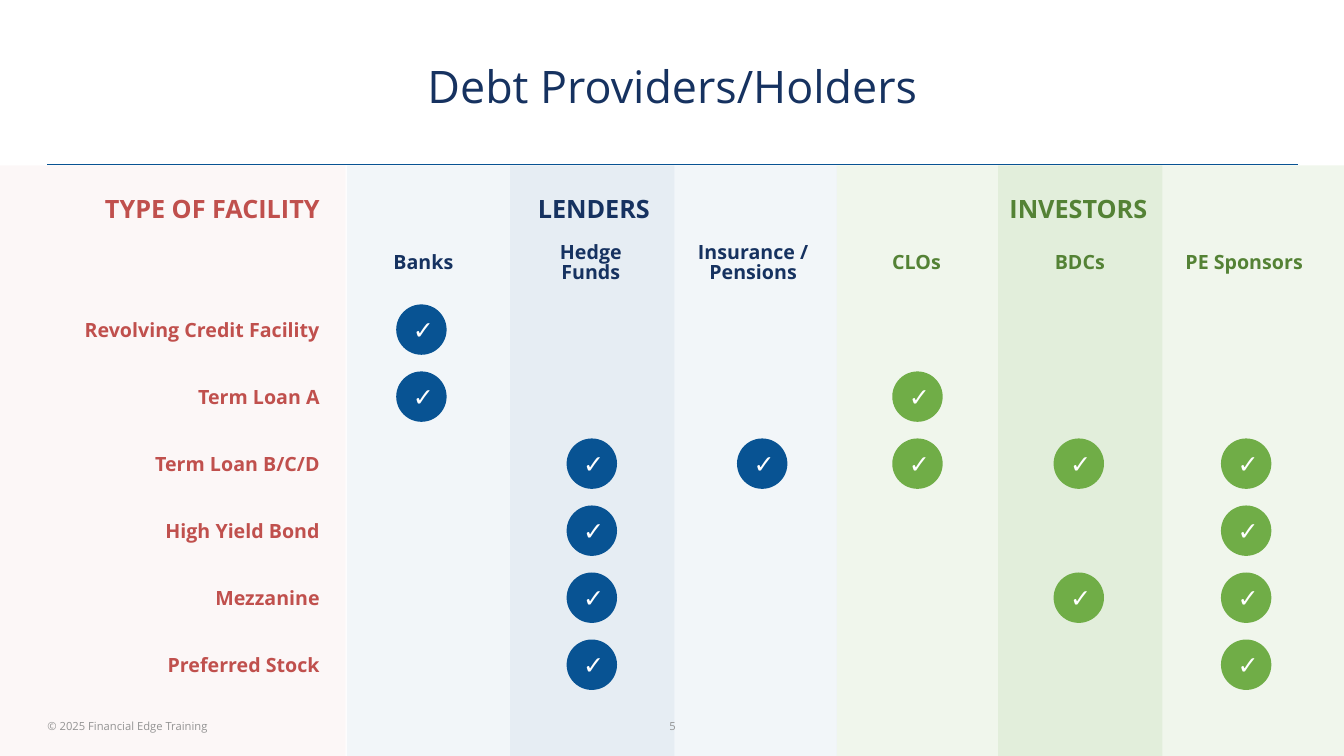
from lxml import etree
from pptx import Presentation
from pptx.dml.color import RGBColor
from pptx.enum.shapes import MSO_CONNECTOR, MSO_SHAPE
from pptx.enum.text import MSO_ANCHOR, PP_ALIGN
from pptx.oxml.ns import qn
from pptx.util import Inches, Pt

LEFT, MID, RIGHT = PP_ALIGN.LEFT, PP_ALIGN.CENTER, PP_ALIGN.RIGHT
RECT, OVAL = MSO_SHAPE.RECTANGLE, MSO_SHAPE.OVAL
LINE = MSO_CONNECTOR.STRAIGHT

# Content
FONT = "Open Sans"
NAVY, BLUE, GREEN, MOSS = "163260", "085393", "70AD47", "548235"
RED, PINK, GREY, WHITE = "C0504D", "E6B9B8", "939393", "FFFFFF"

TITLE = "Debt Providers/Holders"
ROWS = ["Revolving Credit Facility", "Term Loan A", "Term Loan B/C/D",
        "High Yield Bond", "Mezzanine", "Preferred Stock"]
# Name, text colour, dot colour, label left, dot left, ticked rows
COLS = [
    ("Banks", NAVY, BLUE, 3.49, 3.93, [0, 1]),
    ("Hedge Funds", NAVY, BLUE, 5.15, 5.62, [2, 3, 4, 5]),
    ("Insurance / Pensions", NAVY, BLUE, 6.76, 7.31, [2]),
    ("CLOs", MOSS, GREEN, 8.38, 8.85, [1, 2]),
    ("BDCs", MOSS, GREEN, 10, 10.45, [2, 4]),
    ("PE Sponsors", MOSS, GREEN, 11.63, 12.11, [2, 3, 4, 5]),
]
# Text, colour, left, width, alignment
HEADS = [
    ("TYPE OF FACILITY", RED, 0.47, 2.8, RIGHT),
    ("LENDERS", NAVY, 5.14, 1.5, MID),
    ("INVESTORS", MOSS, 8.44, 4.51, MID),
]
# Left, width, colour, opacity in percent
BANDS = [
    (8.3, 5.03, GREEN, 10),
    (9.9, 1.63, GREEN, 10),
    (0, 3.43, PINK, 10),
    (3.44, 4.86, BLUE, 5),
    (5.06, 1.63, BLUE, 5),
]
# Text, left, width, alignment
NOTES = [("© 2025 Financial Edge Training", 0.47, 4.44, LEFT),
         ("5", 5.17, 3, MID)]

EDGE, WIDE = 0.47, 12.4
TOP, TALL = 1.64, 5.86
ROW, STEP, DOT = 3.02, 0.665, 0.5

prs = Presentation()
prs.slide_width, prs.slide_height = Inches(13.33), Inches(7.5)
slide = prs.slides.add_slide(prs.slide_layouts[5])
shapes = slide.shapes


def rgb(code):
    return RGBColor.from_string(code)


def place(x, y, w, h):
    return [Inches(n) for n in (x, y, w, h)]


def write(shape, text, size=14, color=NAVY, bold=False, align=MID,
          pad=(0.1, 0.1), wrap=True, space=None):
    frame = shape.text_frame
    frame.word_wrap = wrap
    frame.vertical_anchor = MSO_ANCHOR.MIDDLE
    frame.margin_left, frame.margin_right = [Inches(n) for n in pad]
    frame.margin_top = frame.margin_bottom = Inches(0.05)
    para = frame.paragraphs[0]
    para.alignment = align
    para.line_spacing = space
    run = para.add_run()
    run.text = text
    font = run.font
    font.name, font.size, font.bold = FONT, Pt(size), bold
    font.color.rgb = rgb(color)


def label(text, x, y, w, h, **style):
    write(shapes.add_textbox(*place(x, y, w, h)), text, **style)


def block(kind, x, y, w, h, color, alpha=100):
    shape = shapes.add_shape(kind, *place(x, y, w, h))
    shape.shadow.inherit = False
    shape.line.fill.background()
    shape.fill.solid()
    shape.fill.fore_color.rgb = rgb(color)
    if alpha < 100:
        tint = shape.fill._xPr.find(".//" + qn("a:srgbClr"))
        etree.SubElement(tint, qn("a:alpha")).set("val", str(alpha * 1000))
    return shape


# Title and rule
title = shapes.title
title.left, title.top, title.width, title.height = place(EDGE, 0.44, WIDE, 0.82)
write(title, TITLE, size=32, pad=(0.08, 0.08))
rule = shapes.add_connector(LINE, *place(EDGE, 1.63, EDGE + WIDE, 1.63))
rule.line.color.rgb = rgb(BLUE)
rule.line.width = Pt(0.75)
etree.SubElement(rule._element.spPr, qn("a:effectLst"))

# Tinted bands
for x, w, color, alpha in BANDS:
    block(RECT, x, TOP, w, TALL, color, alpha)

# Group heads and row names
for text, color, x, w, align in HEADS:
    label(text, x, 1.87, w, 0.4, size=18, color=color, bold=True, align=align)
for i, text in enumerate(ROWS):
    label(text, EDGE, ROW + i * STEP, 2.8, DOT, color=RED, bold=True,
          align=RIGHT)

# Provider columns with ticks
for text, color, tone, x, spot, ticks in COLS:
    label(text, x, 2.29, 1.42, 0.65, color=color, bold=True,
          pad=(0.11, 0.11), space=0.85)
    for i in ticks:
        dot = block(OVAL, spot, ROW + i * STEP, DOT, DOT, tone)
        write(dot, "✓", size=18, color=WHITE, bold=True, pad=(0.04, 0),
              wrap=False)

# Footer
for text, x, w, align in NOTES:
    label(text, x, 7.05, w, 0.3, size=8, color=GREY, align=align, pad=(0, 0))

prs.save("out.pptx")
